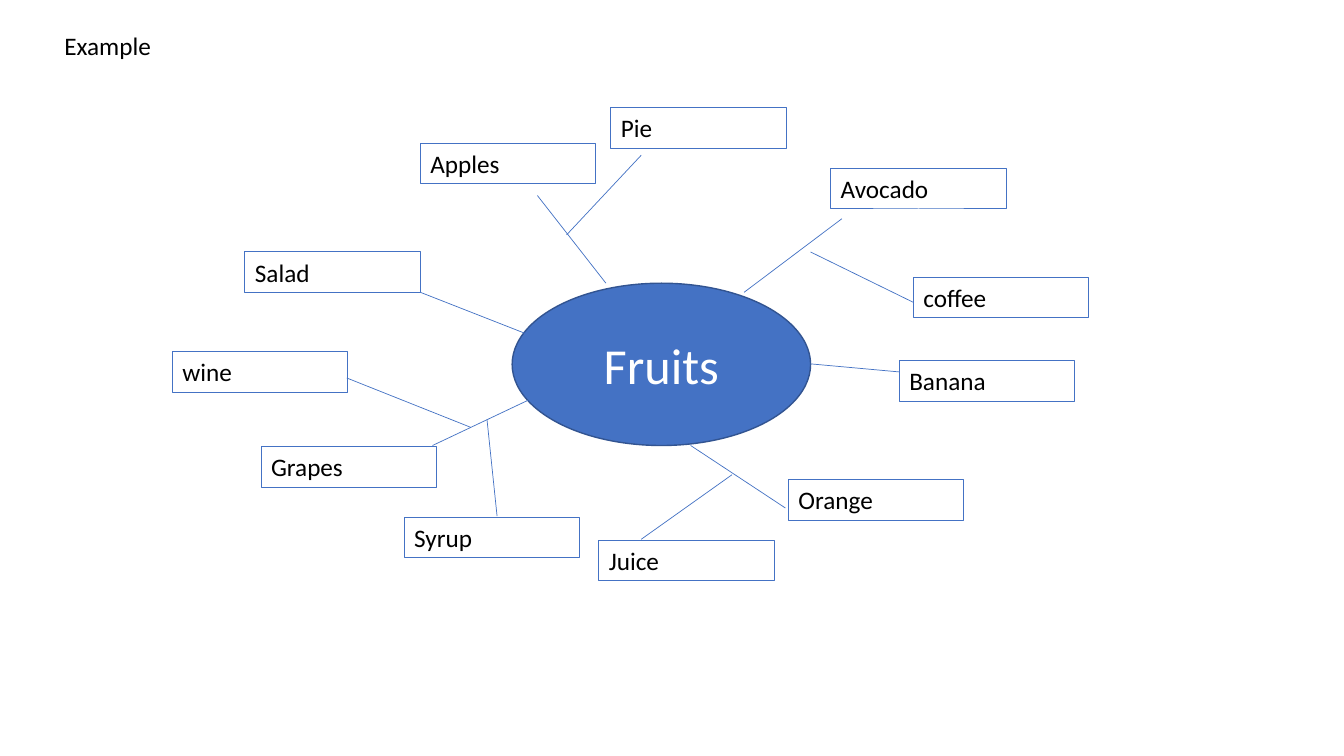
from dataclasses import dataclass

from lxml import etree
from pptx import Presentation
from pptx.dml.color import RGBColor
from pptx.enum.shapes import MSO_CONNECTOR, MSO_SHAPE
from pptx.enum.text import MSO_ANCHOR, MSO_AUTO_SIZE, PP_ALIGN
from pptx.oxml.ns import qn
from pptx.shapes.base import BaseShape
from pptx.slide import Slide
from pptx.text.text import TextFrame
from pptx.util import Inches, Pt

STRAIGHT = MSO_CONNECTOR.STRAIGHT
ELLIPSE = MSO_SHAPE.OVAL
MIDDLE = MSO_ANCHOR.MIDDLE
GROW = MSO_AUTO_SIZE.SHAPE_TO_FIT_TEXT
CENTER = PP_ALIGN.CENTER

BLUE = RGBColor(0x44, 0x72, 0xC4)
DARK_BLUE = RGBColor(0x32, 0x54, 0x91)
BLACK = RGBColor(0x00, 0x00, 0x00)
WHITE = RGBColor(0xFF, 0xFF, 0xFF)

FONT = "Calibri"
CELL = Inches(0.1)
LABEL_COLUMNS = 17.4
LABEL_ROWS = 4.04


@dataclass(frozen=True)
class Label:
    text: str
    column: float
    row: float
    framed: bool = True


@dataclass(frozen=True)
class Branch:
    start_column: float
    start_row: float
    end_column: float
    end_row: float


BRANCHES = (
    Branch(73.8, 29.0, 83.5, 21.7),
    Branch(60.1, 28.1, 53.3, 19.4),
    Branch(52.4, 39.7, 42.9, 44.2),
    Branch(68.5, 44.2, 77.9, 50.4),
    Branch(80.4, 36.1, 89.2, 36.9),
    Branch(52.4, 33.2, 41.7, 29.0),
    Branch(80.4, 25.0, 90.6, 30.0),
    Branch(72.6, 47.1, 63.6, 53.5),
    Branch(46.7, 42.4, 34.4, 37.5),
    Branch(49.3, 51.2, 48.3, 41.6),
    Branch(56.2, 23.3, 63.6, 15.4),
)

LABELS = (
    Label("Avocado", 82.4, 16.7),
    Label("coffee", 90.6, 27.5),
    Label("Banana", 89.2, 35.8),
    Label("Pie", 60.6, 10.7),
    Label("Apples", 41.7, 14.2),
    Label("Salad", 24.3, 25.0),
    Label("wine", 17.1, 34.9),
    Label("Grapes", 25.9, 44.3),
    Label("Syrup", 40.1, 51.3),
    Label("Juice", 59.4, 53.6),
    Label("Orange", 78.2, 47.6),
    Label("Example", 5.4, 2.5, framed=False),
)


def cells(count: float) -> int:
    return round(count * CELL)


def write(text_frame: TextFrame, text: str, size: int, color: RGBColor) -> None:
    text_frame.text = text
    text_frame.word_wrap = True
    font = text_frame.paragraphs[0].runs[0].font
    font.name = FONT
    font.size = Pt(size)
    font.color.rgb = color


def outline(shape: BaseShape, color: RGBColor, width: float) -> None:
    shape.line.color.rgb = color
    shape.line.width = Pt(width)


def draw_center(slide: Slide) -> None:
    center = slide.shapes.add_shape(
        ELLIPSE, cells(50.8), cells(28.1), cells(29.6), cells(16.1)
    )
    center.shadow.inherit = False
    center.fill.solid()
    center.fill.fore_color.rgb = BLUE
    outline(center, DARK_BLUE, 1)
    write(center.text_frame, "Fruits", 36, WHITE)
    center.text_frame.vertical_anchor = MIDDLE
    center.text_frame.paragraphs[0].alignment = CENTER


def draw_branch(slide: Slide, branch: Branch) -> None:
    connector = slide.shapes.add_connector(
        STRAIGHT,
        cells(branch.start_column),
        cells(branch.start_row),
        cells(branch.end_column),
        cells(branch.end_row),
    )
    outline(connector, BLUE, 0.5)
    etree.SubElement(connector._element.spPr, qn("a:effectLst"))


def draw_label(slide: Slide, label: Label) -> None:
    box = slide.shapes.add_textbox(
        cells(label.column), cells(label.row), cells(LABEL_COLUMNS), cells(LABEL_ROWS)
    )
    write(box.text_frame, label.text, 18, BLACK)
    box.text_frame.auto_size = GROW
    if label.framed:
        outline(box, BLUE, 0.75)


def main() -> None:
    presentation = Presentation()
    presentation.slide_width = Inches(13.33)
    presentation.slide_height = Inches(7.5)
    slide = presentation.slides.add_slide(presentation.slide_layouts[6])
    draw_center(slide)
    for branch in BRANCHES:
        draw_branch(slide, branch)
    for label in LABELS:
        draw_label(slide, label)
    presentation.save("out.pptx")


if __name__ == "__main__":
    main()
